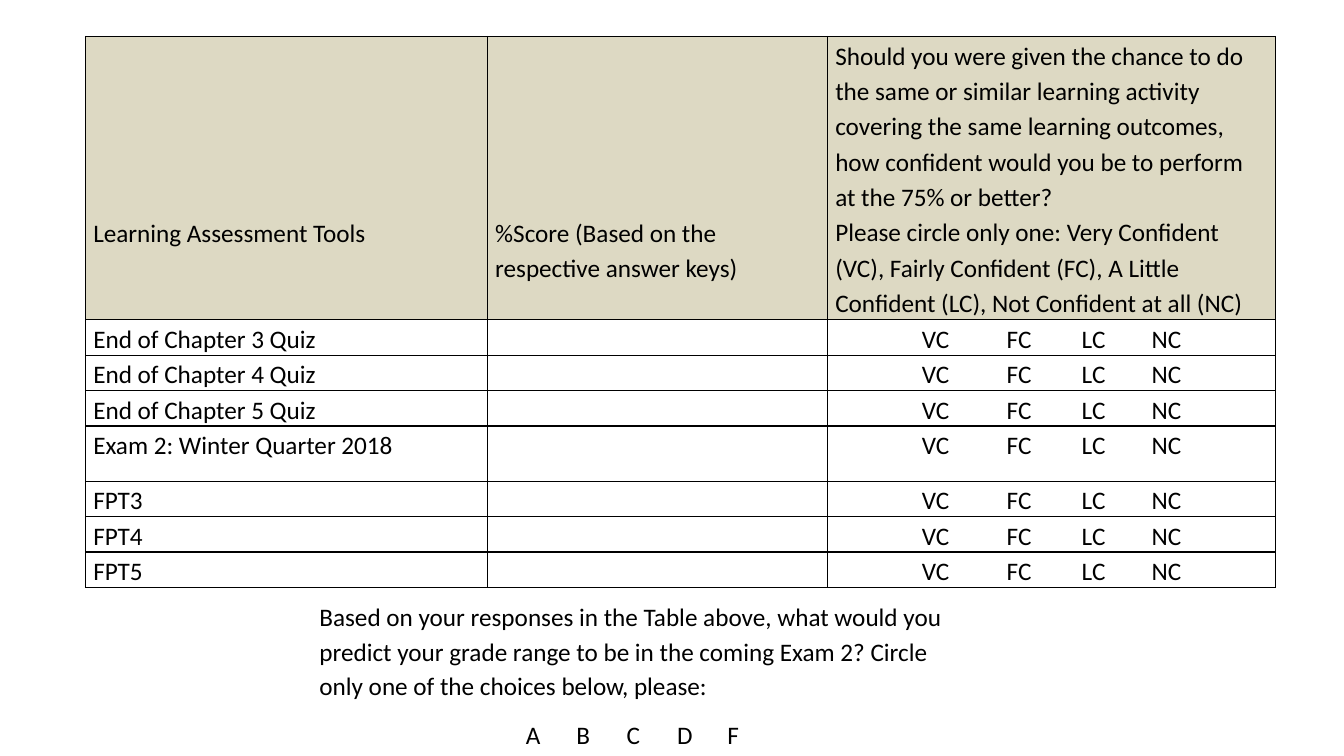
from dataclasses import dataclass

from lxml import etree
from pptx import Presentation
from pptx.dml.color import RGBColor
from pptx.enum.text import MSO_AUTO_SIZE, PP_ALIGN
from pptx.oxml.ns import qn
from pptx.util import Cm, Pt

LEFT, CENTER = PP_ALIGN.LEFT, PP_ALIGN.CENTER
GROW = MSO_AUTO_SIZE.SHAPE_TO_FIT_TEXT
BLANK_LAYOUT = 6


@dataclass(frozen=True)
class Theme:
    font: str = "Calibri"
    size: float = 18
    ink: str = "000000"
    header: str = "DDD9C3"
    border: float = 1
    spacing: float = 1.15


THEME = Theme()

# Table content
HEADINGS = [
    ["Learning Assessment Tools"],
    ["%Score (Based on the respective answer keys)"],
    ["Should you were given the chance to do the same or similar learning activity "
     "covering the same learning outcomes, how confident would you be to perform "
     "at the 75% or better?",
     "Please circle only one: Very Confident (VC), Fairly Confident (FC), "
     "A Little Confident (LC), Not Confident at all (NC)"],
]
EXAM = "Exam 2: Winter Quarter 2018"
TOOLS = [f"End of Chapter {n} Quiz" for n in (3, 4, 5)] + [EXAM] + [f"FPT{n}" for n in (3, 4, 5)]
CONFIDENCE = "\t".join(["VC", "FC", "LC", "NC"])

# Table measures in centimetres
COLUMNS = [10.13, 8.57, 11.29]
HEADER_HEIGHT, ROW_HEIGHT, EXAM_HEIGHT = 7.14, 0.89, 1.39
CELL_MARGIN = 0.19
HEADING_DROP = 4.47
CHOICE_INDENT = 2.18
CHOICE_TABS = [2.14, 4.03, 5.79]


def write(frame, paragraphs, align=LEFT, after=0, tabs=()):
    """Add paragraphs to a frame, the first one in its opening paragraph."""
    for index, text in enumerate(paragraphs):
        line = frame.add_paragraph() if index or frame.text else frame.paragraphs[0]
        line.alignment = align
        line.line_spacing = THEME.spacing
        line.space_after = Pt(after)
        if tabs:
            stops = etree.SubElement(line._p.get_or_add_pPr(), qn("a:tabLst"))
            for stop in tabs:
                etree.SubElement(stops, qn("a:tab"), pos=str(Cm(stop)), algn="l")
        run = line.add_run()
        run.text = text
        run.font.name = THEME.font
        run.font.size = Pt(THEME.size)
        run.font.color.rgb = RGBColor.from_string(THEME.ink)


def draw_borders(cell):
    properties = cell._tc.get_or_add_tcPr()
    for position, side in enumerate(("a:lnL", "a:lnR", "a:lnT", "a:lnB")):
        edge = etree.Element(qn(side), w=str(Pt(THEME.border)))
        fill = etree.SubElement(edge, qn("a:solidFill"))
        etree.SubElement(fill, qn("a:srgbClr"), val=THEME.ink)
        properties.insert(position, edge)


def fill_cell(cell, paragraphs=(), color=None, top=0, indent=0, tabs=()):
    cell.margin_left = Cm(CELL_MARGIN + indent)
    cell.margin_right = Cm(CELL_MARGIN)
    cell.margin_top, cell.margin_bottom = Cm(top), 0
    if color:
        cell.fill.solid()
        cell.fill.fore_color.rgb = RGBColor.from_string(color)
    else:
        cell.fill.background()
    draw_borders(cell)
    write(cell.text_frame, paragraphs, tabs=tabs)


def add_assessment_table(slide):
    heights = [HEADER_HEIGHT] + [EXAM_HEIGHT if tool == EXAM else ROW_HEIGHT for tool in TOOLS]
    table = slide.shapes.add_table(len(heights), len(COLUMNS), Cm(2.16), Cm(0.92),
                                   Cm(sum(COLUMNS)), Cm(sum(heights))).table
    table.first_row = table.horz_banding = False
    for column, width in zip(table.columns, COLUMNS):
        column.width = Cm(width)
    for row, height in zip(table.rows, heights):
        row.height = Cm(height)

    # Header: the short headings sit lower than the long question
    for index, heading in enumerate(HEADINGS):
        drop = HEADING_DROP if len(heading) == 1 else 0
        fill_cell(table.cell(0, index), heading, color=THEME.header, top=drop)

    # One row per assessment tool
    for index, tool in enumerate(TOOLS, start=1):
        fill_cell(table.cell(index, 0), [tool])
        fill_cell(table.cell(index, 1))
        fill_cell(table.cell(index, 2), [CONFIDENCE], indent=CHOICE_INDENT, tabs=CHOICE_TABS)


def add_grade_question(slide):
    frame = slide.shapes.add_textbox(Cm(7.8), Cm(14.91), Cm(16.28), Cm(4.14)).text_frame
    frame.word_wrap = True
    frame.auto_size = GROW
    write(frame, ["Based on your responses in the Table above, what would you predict your "
                  "grade range to be in the coming Exam 2? Circle only one of the choices "
                  "below, please:"], after=10)
    write(frame, ["\t".join("ABCDF")], align=CENTER, after=10)


def main():
    deck = Presentation()
    deck.slide_width, deck.slide_height = Cm(33.87), Cm(19.05)
    slide = deck.slides.add_slide(deck.slide_layouts[BLANK_LAYOUT])
    add_assessment_table(slide)
    add_grade_question(slide)
    deck.save("out.pptx")


if __name__ == "__main__":
    main()
